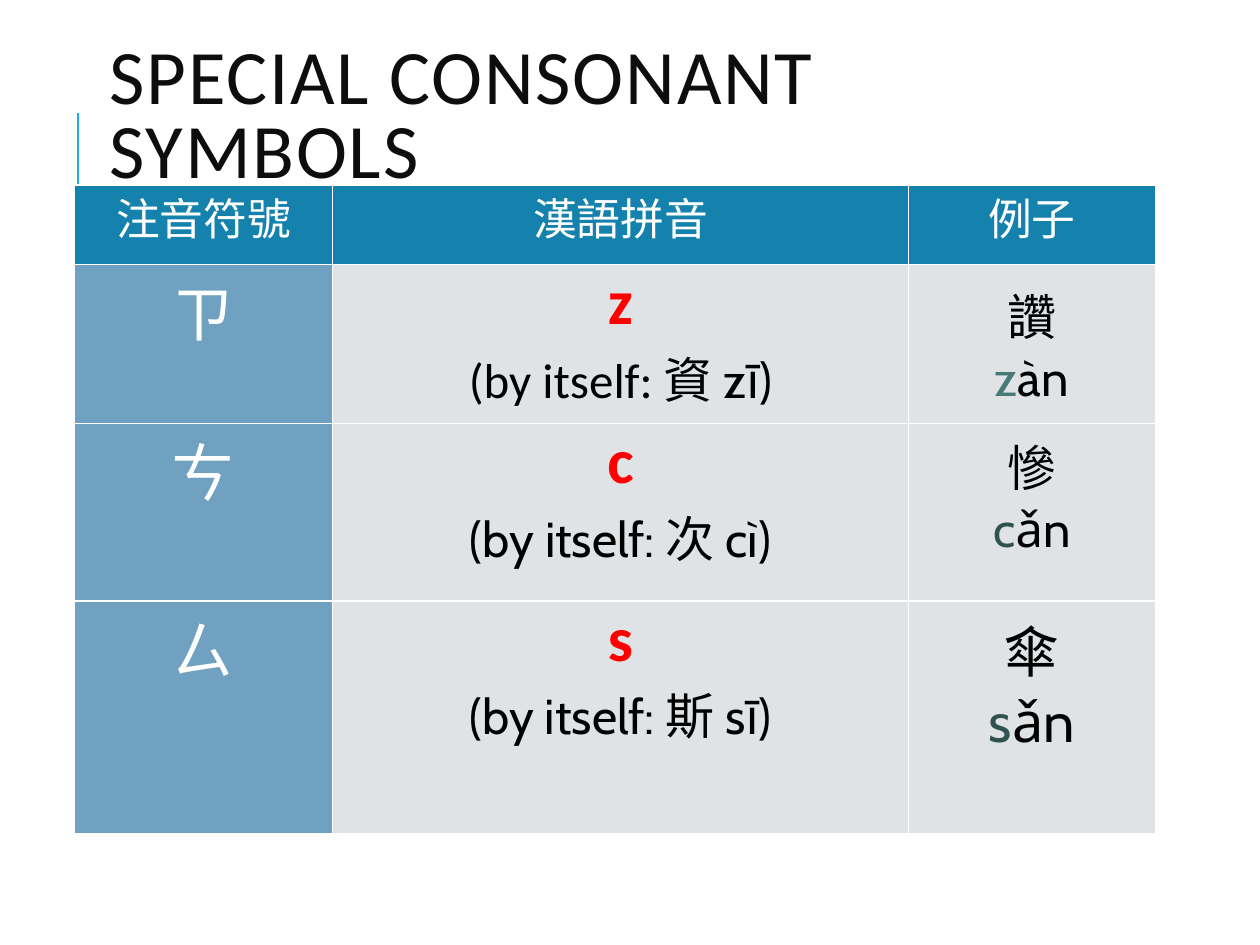
from lxml import etree
from pptx import Presentation
from pptx.dml.color import RGBColor
from pptx.enum import shapes, text
from pptx.oxml.ns import qn
from pptx.util import Inches, Pt

WHITE = RGBColor(0xFF, 0xFF, 0xFF)
BLACK = RGBColor(0, 0, 0)
INK = RGBColor(0x0D, 0x0D, 0x0D)
RED = RGBColor(0xFF, 0, 0)
ACCENT = RGBColor(0x1C, 0xAD, 0xE4)
HEADER = RGBColor(0x14, 0x82, 0xAC)
SYMBOL = RGBColor(0x70, 0xA1, 0xC0)
BODY = RGBColor(0xDF, 0xE3, 0xE5)
TEAL = RGBColor(0x48, 0x7B, 0x78)
DARK_TEAL = RGBColor(0x30, 0x52, 0x50)

TOP, MIDDLE = text.MSO_ANCHOR.TOP, text.MSO_ANCHOR.MIDDLE

# Content
TITLE = "SPECIAL CONSONANT SYMBOLS"
HEADINGS = ["注音符號", "漢語拼音", "例子"]
# symbol, letter, runs of (text, font) said by itself, example word,
# rest of its pinyin, letter colour, example size, anchor, top and bottom inset
CONSONANTS = [
    ("ㄗ", "z", [("(by itself: 資 ", "Calibri"), ("zī)", "Cabin")],
     "讚", "àn", TEAL, 28, MIDDLE, 0),
    ("ㄘ", "c", [("(by itself: 次 cì)", "Cabin")],
     "慘", "ǎn", DARK_TEAL, 28, TOP, 0.05),
    ("ㄙ", "s", [("(by itself: 斯 sī)", "Cabin")],
     "傘", "ǎn", DARK_TEAL, 32, TOP, 0.05),
]

# Layout
LEFT, TABLE_TOP = 0.59, 1.47
COLS = [2.05, 4.57, 1.96]
UPPER_ROWS, LOWER_ROWS = [0.63, 1.26, 1.41], [1.85]


def set_borders(cell):
    tc_pr = cell._tc.get_or_add_tcPr()
    for i, side in enumerate(("lnL", "lnR", "lnT", "lnB")):
        ln = etree.Element(qn("a:" + side), w=str(Pt(1)))
        fill = etree.SubElement(ln, qn("a:solidFill"))
        etree.SubElement(fill, qn("a:srgbClr"), val=str(WHITE))
        tc_pr.insert(i, ln)


def fill_cell(cell, fill, paragraphs, anchor=TOP, inset=0):
    """Each paragraph is a list of (text, size, font, colour, bold) runs."""
    cell.fill.solid()
    cell.fill.fore_color.rgb = fill
    set_borders(cell)
    cell.vertical_anchor = anchor
    cell.margin_left = cell.margin_right = Inches(0.07)
    cell.margin_top = cell.margin_bottom = Inches(inset)
    tf = cell.text_frame
    for i, runs in enumerate(paragraphs):
        p = tf.add_paragraph() if i else tf.paragraphs[0]
        p.alignment = text.PP_ALIGN.CENTER
        for words, size, font, colour, bold in runs:
            r = p.add_run()
            r.text = words
            r.font.size, r.font.name, r.font.bold = Pt(size), font, bold
            r.font.color.rgb = colour


def add_table(s, top, rows):
    table = s.shapes.add_table(len(rows), len(COLS), Inches(LEFT), Inches(top),
                               Inches(sum(COLS)), Inches(sum(rows))).table
    for column, width in zip(table.columns, COLS):
        column.width = Inches(width)
    for row, height in zip(table.rows, rows):
        row.height = Inches(height)
    return table


def fill_consonant(row, consonant):
    symbol, letter, alone, word, rest, colour, size, anchor, inset = consonant
    fill_cell(row.cells[0], SYMBOL, [[(symbol, 36, "Cabin", WHITE, False)]])
    fill_cell(row.cells[1], BODY, [
        [(letter, 36, "Calibri", RED, True)],
        [(words, 28, font, BLACK, False) for words, font in alone]])
    fill_cell(row.cells[2], BODY, [
        [(word, size, "Cabin", BLACK, False)],
        [(letter, size, "Cabin", colour, False),
         (rest, size, "Cabin", BLACK, False)]], anchor, inset)


prs = Presentation()
prs.slide_width, prs.slide_height = Inches(10), Inches(7.5)
s = prs.slides.add_slide(prs.slide_layouts[5])

# Title
title = s.shapes.title
title.left, title.top = Inches(0.77), Inches(0.13)
title.width, title.height = Inches(7.97), Inches(1.64)
tf = title.text_frame
tf.text = TITLE
tf.word_wrap = True
tf.auto_size = text.MSO_AUTO_SIZE.NONE
tf.vertical_anchor = MIDDLE
p = tf.paragraphs[0]
p.alignment = text.PP_ALIGN.LEFT
p.line_spacing = 0.8
p.font.size, p.font.name = Pt(44), "Calibri"
p.font.color.rgb = INK
p.runs[0].font._element.set("spc", "100")

# Accent line beside the title
line = s.shapes.add_connector(shapes.MSO_CONNECTOR.STRAIGHT, Inches(0.62),
                              Inches(1.9), Inches(0.62), Inches(0.9))
line.line.color.rgb = ACCENT
line.line.width = Pt(1.5)
etree.SubElement(line._element.spPr, qn("a:effectLst"))

# Tables: headings with the first two consonants, then the last one
upper = add_table(s, TABLE_TOP, UPPER_ROWS)
lower = add_table(s, TABLE_TOP + sum(UPPER_ROWS), LOWER_ROWS)
for cell, heading in zip(upper.rows[0].cells, HEADINGS):
    fill_cell(cell, HEADER, [[(heading, 25, "Cabin", WHITE, False)]])
for row, consonant in zip([*list(upper.rows)[1:], *lower.rows], CONSONANTS):
    fill_consonant(row, consonant)

prs.save("out.pptx")
